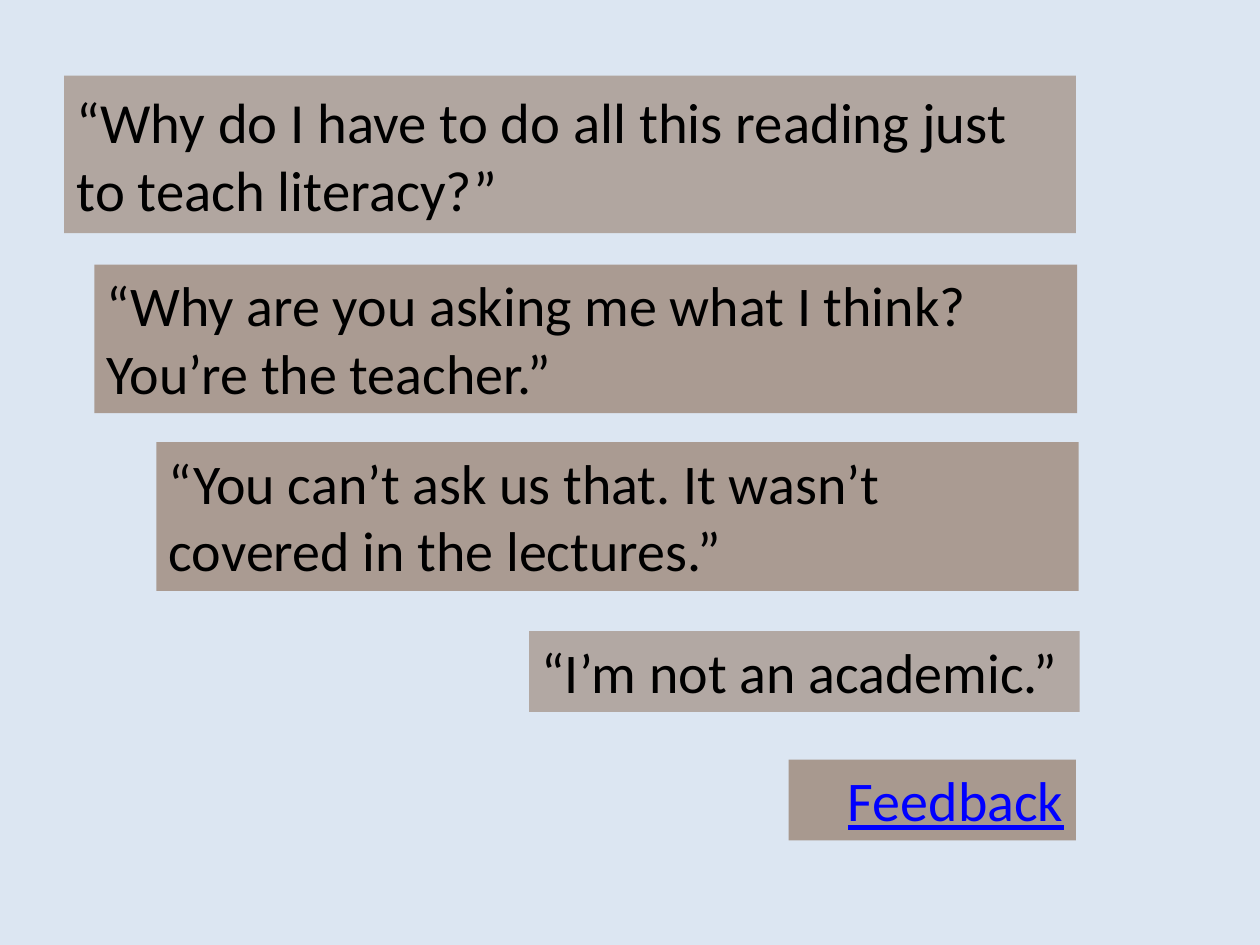
from lxml.etree import SubElement
from pptx import Presentation
from pptx.dml.color import RGBColor
from pptx.enum.text import MSO_ANCHOR, PP_ALIGN
from pptx.oxml.ns import qn
from pptx.util import Inches, Pt

BACKGROUND = "DCE6F2"
BROWN = "8D705B"
BLACK = "000000"
LINK_BLUE = "0000FF"

QUOTES = [
    ("“Why do I have to do all this reading just to teach literacy?”",
     (0.51, 0.6, 8.03, 1.25), 54, {"size": 32.4, "anchor": MSO_ANCHOR.MIDDLE}),
    ("“Why are you asking me what I think? You’re the teacher.”",
     (0.75, 2.1, 7.8, 1.18), 63, {}),
    ("“You can’t ask us that. It wasn’t covered in the lectures.”",
     (1.24, 3.51, 7.32, 1.18), 63, {}),
    ("“I’m not an academic.”", (4.2, 5.01, 4.37, 0.64), 52, {"wrap": False}),
]
FEEDBACK_BOX = (6.26, 6.03, 2.28, 0.64)


def set_fill(fill, color, opacity=100):
    """Apply a solid hex colour with an opacity in percent."""
    fill.solid()
    fill.fore_color.rgb = RGBColor.from_string(color)
    if opacity < 100:
        color_element = fill._xPr.find(qn("a:solidFill"))[0]
        SubElement(color_element, qn("a:alpha"), val=str(opacity * 1000))


def add_panel(slide, text, box, opacity, size=32, color=BLACK,
              anchor=MSO_ANCHOR.TOP, wrap=True):
    """Add a translucent brown text panel and return its paragraph."""
    shape = slide.shapes.add_textbox(*map(Inches, box))
    set_fill(shape.fill, BROWN, opacity)
    frame = shape.text_frame
    frame.word_wrap = wrap
    frame.vertical_anchor = anchor
    paragraph = frame.paragraphs[0]
    paragraph.text = text
    paragraph.alignment = PP_ALIGN.LEFT
    paragraph.font.name = "Calibri"
    paragraph.font.size = Pt(size)
    set_fill(paragraph.font.fill, color)
    return paragraph


def add_feedback(slide, box):
    """Add the underlined, right-aligned feedback label."""
    paragraph = add_panel(slide, "Feedback", box, 65, color=LINK_BLUE)
    paragraph.alignment = PP_ALIGN.RIGHT
    paragraph.font.underline = True


def main():
    """Build and save the slide of student quotes."""
    presentation = Presentation()
    presentation.slide_width = Inches(10)
    presentation.slide_height = Inches(7.5)
    slide = presentation.slides.add_slide(presentation.slide_layouts[6])
    set_fill(slide.background.fill, BACKGROUND)
    for text, box, opacity, options in QUOTES:
        add_panel(slide, text, box, opacity, **options)
    add_feedback(slide, FEEDBACK_BOX)
    presentation.save("out.pptx")


if __name__ == "__main__":
    main()
